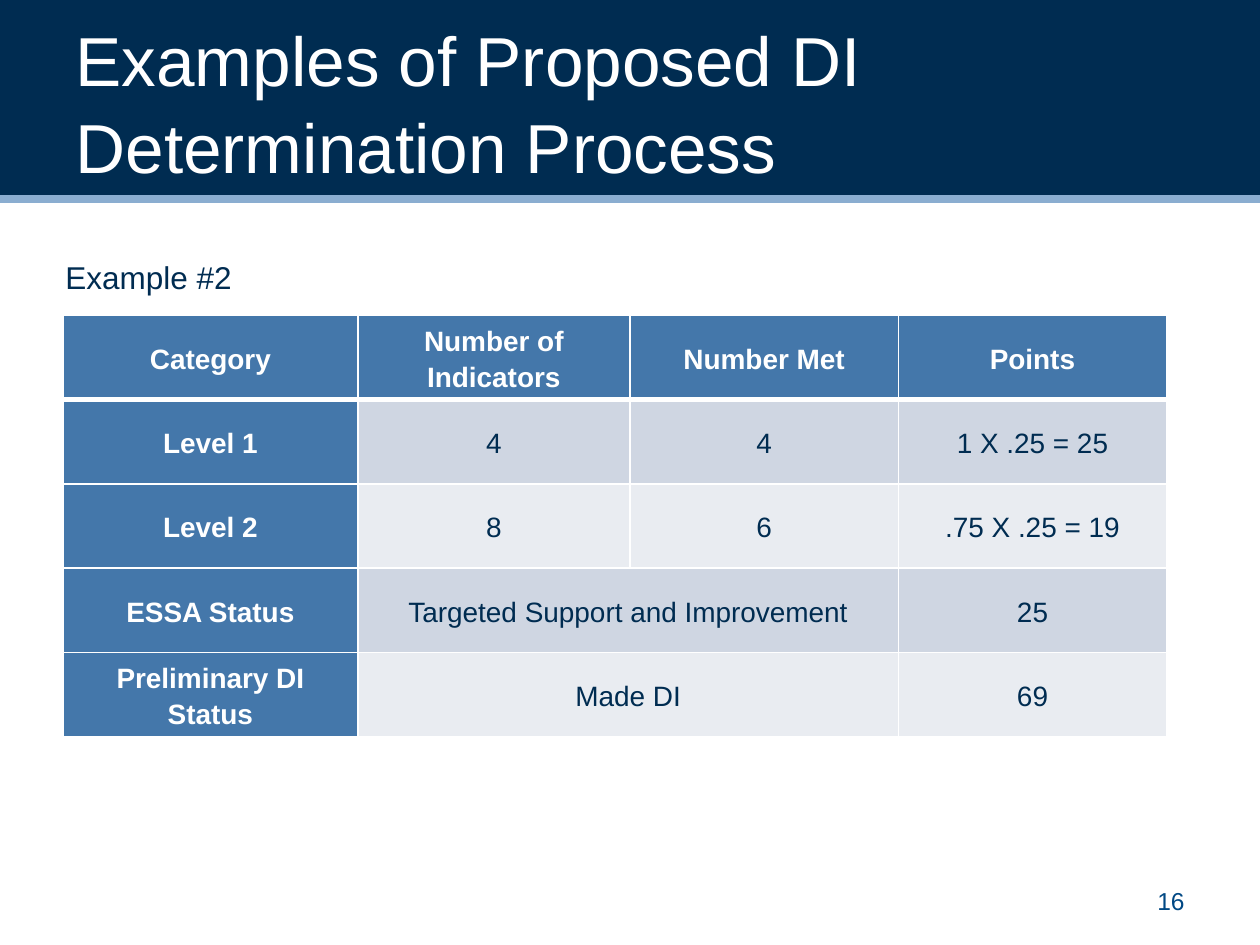
from dataclasses import dataclass

from lxml.etree import SubElement
from pptx import Presentation
from pptx.dml.color import RGBColor
from pptx.enum.shapes import MSO_CONNECTOR as Conn, MSO_SHAPE as Shape
from pptx.enum.text import MSO_ANCHOR as Anchor, MSO_AUTO_SIZE as Fit, PP_ALIGN as Align
from pptx.oxml.ns import qn
from pptx.util import Inches, Pt

WIDE, HIGH = 10, 7.5
NAVY, SKY, BLUE, WHITE = "002C51", "8AADD0", "4477AA", "FFFFFF"
BANDS = ("CFD6E2", "E9ECF1")
BAR = 1.58
COLS = (2.34, 2.16, 2.13, 2.13)
ROW = 0.67
ROWS = (
    ("Category", "Number of Indicators", "Number Met", "Points"),
    ("Level 1", "4", "4", "1 X .25 = 25"),
    ("Level 2", "8", "6", ".75 X .25 = 19"),
    ("ESSA Status", "Targeted Support and Improvement", None, "25"),
    ("Preliminary DI Status", "Made DI", None, "69"),
)


@dataclass
class Style:
    size: float
    color: str
    bold: bool = False
    align: Align = Align.LEFT
    space: float = 1.0


@dataclass
class Label:
    text: str
    box: tuple
    style: Style
    anchor: Anchor = Anchor.TOP


LABELS = (
    Label("16", (7.17, 6.95, 2.33, 0.4),
          Style(14, "004884", align=Align.RIGHT), Anchor.MIDDLE),
    Label("Example #2", (0.42, 2, 6.67, 0.4), Style(18, NAVY)),
)


def tint(code: str) -> RGBColor:
    return RGBColor.from_string(code)


def spot(*box: float) -> list:
    return [Inches(part) for part in box]


def write(frame, text: str, style: Style) -> None:
    frame.text = text
    para = frame.paragraphs[0]
    para.alignment = style.align
    para.line_spacing = style.space
    font = para.font
    font.name, font.size, font.bold = "Arial", Pt(style.size), style.bold
    font.color.rgb = tint(style.color)


def edge(cell, side: str, width: float) -> None:
    """Draw a white border on one side (L, R, T or B) of a cell."""
    props = cell._tc.get_or_add_tcPr()
    line = SubElement(props, qn(f"a:ln{side}"), w=str(Pt(width)))
    fill = SubElement(line, qn("a:solidFill"))
    SubElement(fill, qn("a:srgbClr"), val=WHITE)


def add_bar(slide) -> None:
    """Put the title bar and its rule behind the title."""
    bar = slide.shapes.add_shape(Shape.RECTANGLE, *spot(0, 0, WIDE, BAR))
    bar.shadow.inherit = False
    bar.fill.solid()
    bar.fill.fore_color.rgb = tint(NAVY)
    bar.line.fill.background()
    rule = slide.shapes.add_connector(Conn.STRAIGHT, *spot(0, BAR, WIDE, BAR))
    rule.line.color.rgb = tint(SKY)
    rule.line.width = Pt(4.5)
    SubElement(rule._element.spPr, qn("a:effectLst"))
    for place, item in enumerate((bar, rule), start=2):
        slide.shapes._spTree.insert(place, item._element)


def add_title(slide, text: str) -> None:
    title = slide.shapes.title
    title.left, title.top, title.width, title.height = spot(0.5, 0.17, 9, 1.25)
    frame = title.text_frame
    frame.auto_size = Fit.NONE
    frame.vertical_anchor = Anchor.MIDDLE
    write(frame, text, Style(39.6, WHITE, space=1.05))


def add_label(slide, label: Label) -> None:
    frame = slide.shapes.add_textbox(*spot(*label.box)).text_frame
    frame.word_wrap = True
    frame.vertical_anchor = label.anchor
    write(frame, label.text, label.style)


def add_cell(cell, text: str, row: int, col: int) -> None:
    head = row == 0 or col == 0
    cell.vertical_anchor = Anchor.MIDDLE
    cell.margin_left = cell.margin_right = Inches(0.07)
    cell.margin_top = cell.margin_bottom = 0
    for side in "LRTB":
        thick = (row, side) in ((0, "B"), (1, "T"))
        edge(cell, side, 3 if thick else 1)
    cell.fill.solid()
    cell.fill.fore_color.rgb = tint(BLUE if head else BANDS[(row - 1) % 2])
    color = WHITE if head else NAVY
    write(cell.text_frame, text, Style(16, color, head, Align.CENTER, 1.15))


def add_grid(slide) -> None:
    box = spot(0.5, 2.5, sum(COLS), ROW * len(ROWS))
    table = slide.shapes.add_table(len(ROWS), len(COLS), *box).table
    table.first_col = True
    for column, width in zip(table.columns, COLS):
        column.width = Inches(width)
    for r, texts in enumerate(ROWS):
        table.rows[r].height = Inches(ROW)
        for c, text in enumerate(texts):
            add_cell(table.cell(r, c), text or "", r, c)
            if text is None:
                table.cell(r, c - 1).merge(table.cell(r, c))


def main() -> None:
    deck = Presentation()
    deck.slide_width, deck.slide_height = spot(WIDE, HIGH)
    slide = deck.slides.add_slide(deck.slide_layouts.get_by_name("Title Only"))
    add_bar(slide)
    add_title(slide, "Examples of Proposed DI Determination Process")
    for label in LABELS:
        add_label(slide, label)
    add_grid(slide)
    deck.save("out.pptx")


if __name__ == "__main__":
    main()
